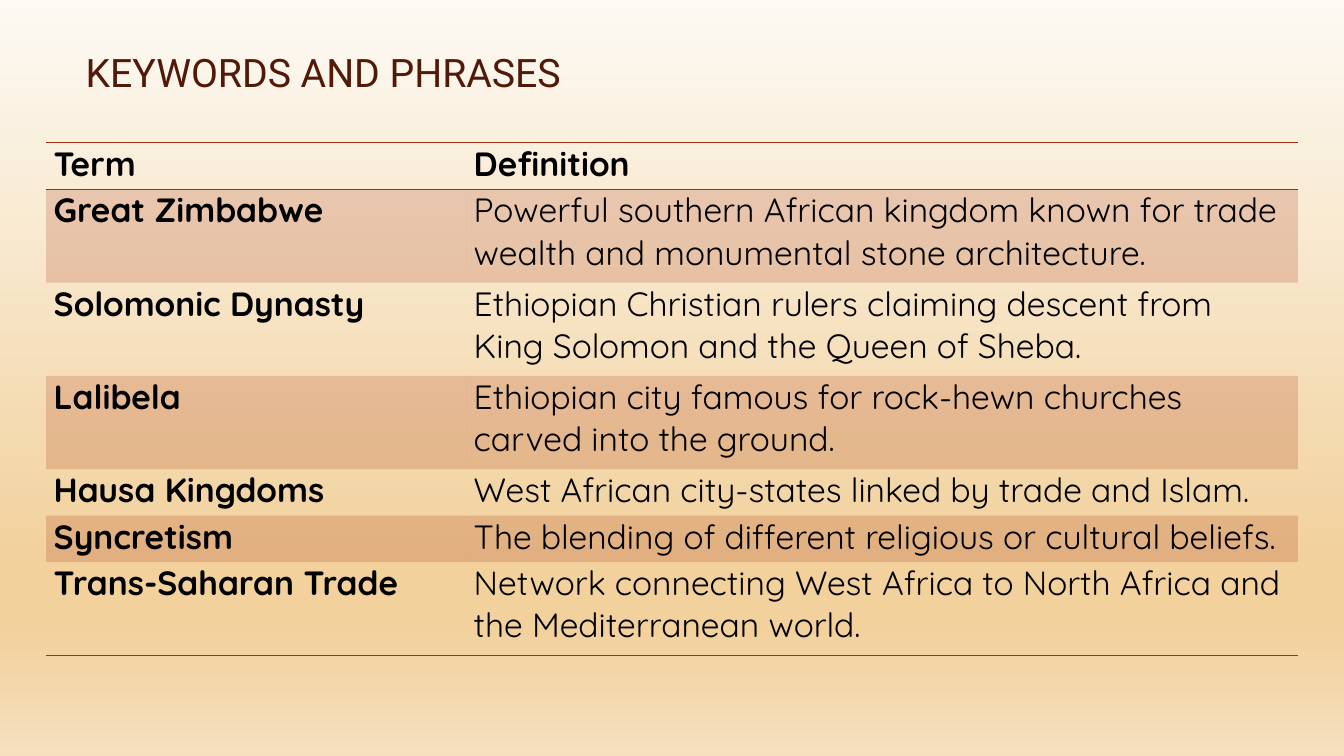
import dataclasses

import lxml.etree
import pptx
import pptx.dml.color
import pptx.enum.dml
import pptx.enum.shapes
import pptx.enum.text
import pptx.oxml.ns
import pptx.util

Pt = pptx.util.Pt
qn = pptx.oxml.ns.qn

ACCENT = "A5300F"
NO_STYLE = "{2D5ABB26-0587-4C30-8999-92F81FD0307C}"
BACKDROP = [(0, "FDFAF4"), (74, "F2D19D"), (83, "F2D19D"), (100, "F6E0BE")]
SLIDE_W, SLIDE_H = 960, 540
LINE_ROW = 33.3


@dataclasses.dataclass
class Entry:
    term: str
    definition: str
    lines: int = 2
    shaded: bool = False
    header: bool = False


ENTRIES = [
    Entry("Term", "Definition", lines=1, header=True),
    Entry("Great Zimbabwe", "Powerful southern African kingdom known for trade "
          "wealth and monumental stone architecture.", shaded=True),
    Entry("Solomonic Dynasty", "Ethiopian Christian rulers claiming descent from "
          "King Solomon and the Queen of Sheba."),
    Entry("Lalibela", "Ethiopian city famous for rock-hewn churches "
          "carved into the ground.", shaded=True),
    Entry("Hausa Kingdoms", "West African city-states linked by trade and Islam.", lines=1),
    Entry("Syncretism", "The blending of different religious or cultural beliefs.",
          lines=1, shaded=True),
    Entry("Trans-Saharan Trade", "Network connecting West Africa to North Africa and "
          "the Mediterranean world."),
]


def rgb(value: str) -> pptx.dml.color.RGBColor:
    return pptx.dml.color.RGBColor.from_string(value)


def write(tf, text: str, *, font: str, size: float, color: str = "000000",
          bold: bool = False, spacing: float = 1.0) -> None:
    p = tf.paragraphs[0]
    p.alignment = pptx.enum.text.PP_ALIGN.LEFT
    p.line_spacing = spacing
    r = p.add_run()
    r.text = text
    r.font.name = font
    r.font.size = Pt(size)
    r.font.bold = bold
    r.font.color.rgb = rgb(color)


def add_color(parent, value: str):
    return lxml.etree.SubElement(parent, qn("a:srgbClr"), val=value)


def add_backdrop(s) -> None:
    """Cover the slide with a vertical gradient behind everything else."""
    sp = s.shapes.add_shape(pptx.enum.shapes.MSO_SHAPE.RECTANGLE,
                            0, 0, Pt(SLIDE_W), Pt(SLIDE_H))
    sp.shadow.inherit = False
    sp.line.fill.background()
    sp.fill.gradient()
    sp.fill.gradient_angle = 270
    stops = sp.element.spPr.find(".//" + qn("a:gsLst"))
    for stop in list(stops):
        stops.remove(stop)
    for percent, color in BACKDROP:
        add_color(lxml.etree.SubElement(stops, qn("a:gs"), pos=str(percent * 1000)), color)
    sp.element.getparent().insert(2, sp.element)


def add_title(s, text: str) -> None:
    title = s.shapes.title
    title.left, title.top, title.width, title.height = Pt(54), Pt(16), Pt(768), Pt(56)
    tf = title.text_frame
    tf.auto_size = pptx.enum.text.MSO_AUTO_SIZE.NONE
    tf.vertical_anchor = pptx.enum.text.MSO_ANCHOR.BOTTOM
    write(tf, text, font="Roboto", size=28, color="521808", spacing=0.9)


def shade(cell) -> None:
    """Fill a cell with the accent colour at 20 % opacity."""
    cell.fill.solid()
    cell.fill.fore_color.rgb = rgb(ACCENT)
    color = cell.fill.fore_color
    tint = cell._tc.tcPr.find(qn("a:solidFill")).find(qn("a:srgbClr"))
    lxml.etree.SubElement(tint, qn("a:alpha"), val="20000")


def add_border(cell, side: str, index: int) -> None:
    """Draw a 1 pt accent line; borders must precede the cell fill."""
    ln = lxml.etree.Element(qn(f"a:ln{side}"), w=str(Pt(1)))
    add_color(lxml.etree.SubElement(ln, qn("a:solidFill")), ACCENT)
    cell._tc.get_or_add_tcPr().insert(index, ln)


def add_glossary(s) -> None:
    height = LINE_ROW * sum(entry.lines for entry in ENTRIES)
    frame = s.shapes.add_table(len(ENTRIES), 2, Pt(33), Pt(102), Pt(894), Pt(height))
    table = frame.table
    table.first_row = table.horz_banding = False
    next(frame.element.iter(qn("a:tableStyleId"))).text = NO_STYLE
    for column, width in zip(table.columns, (300, 594)):
        column.width = Pt(width)
    for i, entry in enumerate(ENTRIES):
        table.rows[i].height = Pt(LINE_ROW * entry.lines)
        sides = "TB" if entry.header else "B" if entry is ENTRIES[-1] else ""
        for j, text in enumerate((entry.term, entry.definition)):
            cell = table.cell(i, j)
            cell.margin_left = cell.margin_right = Pt(5.4)
            cell.margin_top = cell.margin_bottom = 0
            if entry.shaded:
                shade(cell)
            else:
                cell.fill.background()
            for index, side in enumerate(sides):
                add_border(cell, side, index)
            write(cell.text_frame, text, font="Quicksand", size=24,
                  bold=j == 0 or entry.header)


def main() -> None:
    prs = pptx.Presentation()
    prs.slide_width, prs.slide_height = Pt(SLIDE_W), Pt(SLIDE_H)
    s = prs.slides.add_slide(prs.slide_layouts[5])
    add_backdrop(s)
    add_title(s, "KEYWORDS AND PHRASES")
    add_glossary(s)
    prs.save("out.pptx")


if __name__ == "__main__":
    main()
